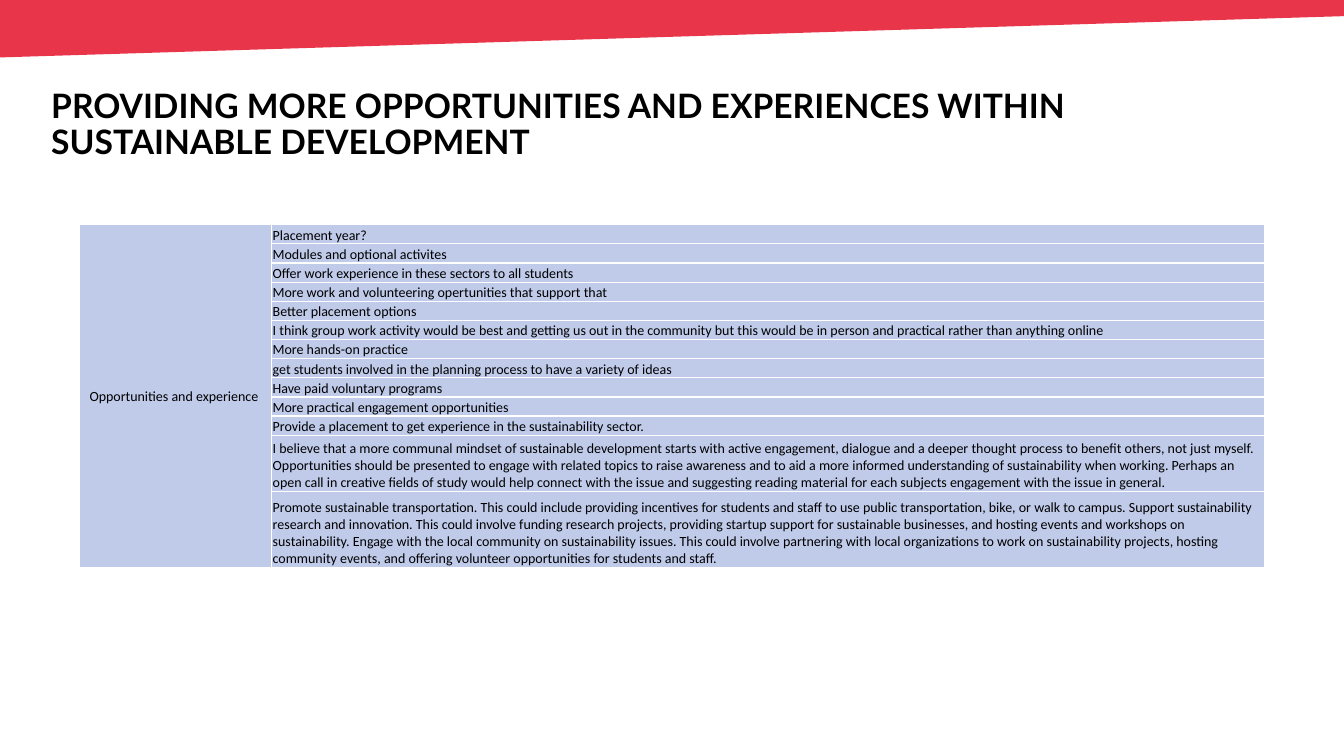
from pptx import Presentation
from pptx.dml.color import RGBColor
from pptx.enum.text import MSO_ANCHOR, PP_ALIGN
from pptx.oxml import parse_xml
from pptx.oxml.ns import nsdecls
from pptx.util import Inches, Pt

W, H = 13.33, 7.5
COLORS = {"band": "E9354A", "cell": "C0CBEA", "text": "000000", "border": "FFFFFF"}
TITLE_FONT = {"name": "Lato", "size": Pt(24), "bold": True}
CELL_FONT = {"name": "Calibri", "size": Pt(10), "bold": False}
MARGINS = {"margin_left": Inches(0.01), "margin_top": Inches(0.01),
           "margin_right": Inches(0.01), "margin_bottom": 0}

TITLE = "PROVIDING MORE OPPORTUNITIES AND EXPERIENCES WITHIN SUSTAINABLE DEVELOPMENT"
THEME = "Opportunities and experience "
COL_WIDTHS = [1.91, 9.85]
LINE_ROW = 0.19
ANSWERS = [
    ("Placement year?", LINE_ROW),
    ("Modules and optional activites", LINE_ROW),
    ("Offer work experience in these sectors to all students", LINE_ROW),
    ("More work and volunteering opertunities that support that", LINE_ROW),
    ("Better placement options", LINE_ROW),
    ("I think group work activity would be best and getting us out in the community "
     "but this would be in person and practical rather than anything online", LINE_ROW),
    ("More hands-on practice", LINE_ROW),
    ("get students involved in the planning process to have a variety of ideas", LINE_ROW),
    ("Have paid voluntary programs", LINE_ROW),
    ("More practical engagement opportunities", LINE_ROW),
    ("Provide a placement to get experience in the sustainability sector.", LINE_ROW),
    ("I believe that a more communal mindset of sustainable development starts with "
     "active engagement, dialogue and a deeper thought process to benefit others, not "
     "just myself. Opportunities should be presented to engage with related topics to "
     "raise awareness and to aid a more informed understanding of sustainability when "
     "working. Perhaps an open call in creative fields of study would help connect with "
     "the issue and suggesting reading material for each subjects engagement with the "
     "issue in general.", 0.56),
    ("Promote sustainable transportation. This could include providing incentives for "
     "students and staff to use public transportation, bike, or walk to campus. Support "
     "sustainability research and innovation. This could involve funding research "
     "projects, providing startup support for sustainable businesses, and hosting events "
     "and workshops on sustainability. Engage with the local community on sustainability "
     "issues. This could involve partnering with local organizations to work on "
     "sustainability projects, hosting community events, and offering volunteer "
     "opportunities for students and staff.", 0.75),
]


def set_attrs(obj, values):
    for name, value in values.items():
        setattr(obj, name, value)


def paint(fill, color):
    fill.solid()
    fill.fore_color.rgb = RGBColor.from_string(COLORS[color])


def write(tf, text, font, align=PP_ALIGN.LEFT):
    p = tf.paragraphs[0]
    p.alignment = align
    r = p.add_run()
    r.text = text
    set_attrs(r.font, font)
    r.font.color.rgb = RGBColor.from_string(COLORS["text"])
    return p


def add_band(s):
    points = [(Inches(x), Inches(y)) for x, y in
              [(-0.01, 0), (0, 0.57), (W + 0.02, 0.16), (W, 0)]]
    builder = s.shapes.build_freeform(*points[0])
    builder.add_line_segments(points[1:], close=True)
    sp = builder.convert_to_shape()
    sp.shadow.inherit = False
    paint(sp.fill, "band")
    sp.line.fill.background()


def add_title(s):
    sp = s.shapes.add_textbox(Inches(0.41), Inches(0.84), Inches(10.59), Inches(0.42))
    sp.text_frame.word_wrap = True
    write(sp.text_frame, TITLE, TITLE_FONT).line_spacing = 0.9


def style_cell(cell, anchor):
    set_attrs(cell, MARGINS)
    cell.vertical_anchor = anchor
    paint(cell.fill, "cell")
    tcPr = cell._tc.get_or_add_tcPr()
    for i, side in enumerate(["lnL", "lnR", "lnT", "lnB"]):
        tcPr.insert(i, parse_xml(
            f'<a:{side} {nsdecls("a")} w="{Pt(1)}"><a:solidFill>'
            f'<a:srgbClr val="{COLORS["border"]}"/></a:solidFill></a:{side}>'))


def add_answers(s):
    width = sum(COL_WIDTHS)
    height = sum(h for _, h in ANSWERS)
    table = s.shapes.add_table(len(ANSWERS), 2, Inches((W - width) / 2), Inches(2.23),
                               Inches(width), Inches(height)).table
    set_attrs(table, {"first_row": False, "horz_banding": False})
    for col, w in zip(table.columns, COL_WIDTHS):
        col.width = Inches(w)
    for i, (text, h) in enumerate(ANSWERS):
        table.rows[i].height = Inches(h)
        theme, answer = table.cell(i, 0), table.cell(i, 1)
        style_cell(theme, MSO_ANCHOR.MIDDLE)
        style_cell(answer, MSO_ANCHOR.BOTTOM)
        theme.text_frame.paragraphs[0].font.size = CELL_FONT["size"]
        write(answer.text_frame, text, CELL_FONT)
    table.cell(0, 0).merge(table.cell(len(ANSWERS) - 1, 0))
    write(table.cell(0, 0).text_frame, THEME, CELL_FONT, PP_ALIGN.CENTER)


def main():
    prs = Presentation()
    set_attrs(prs, {"slide_width": Inches(W), "slide_height": Inches(H)})
    s = prs.slides.add_slide(prs.slide_layouts[6])
    add_band(s)
    add_title(s)
    add_answers(s)
    prs.save("out.pptx")


if __name__ == "__main__":
    main()
